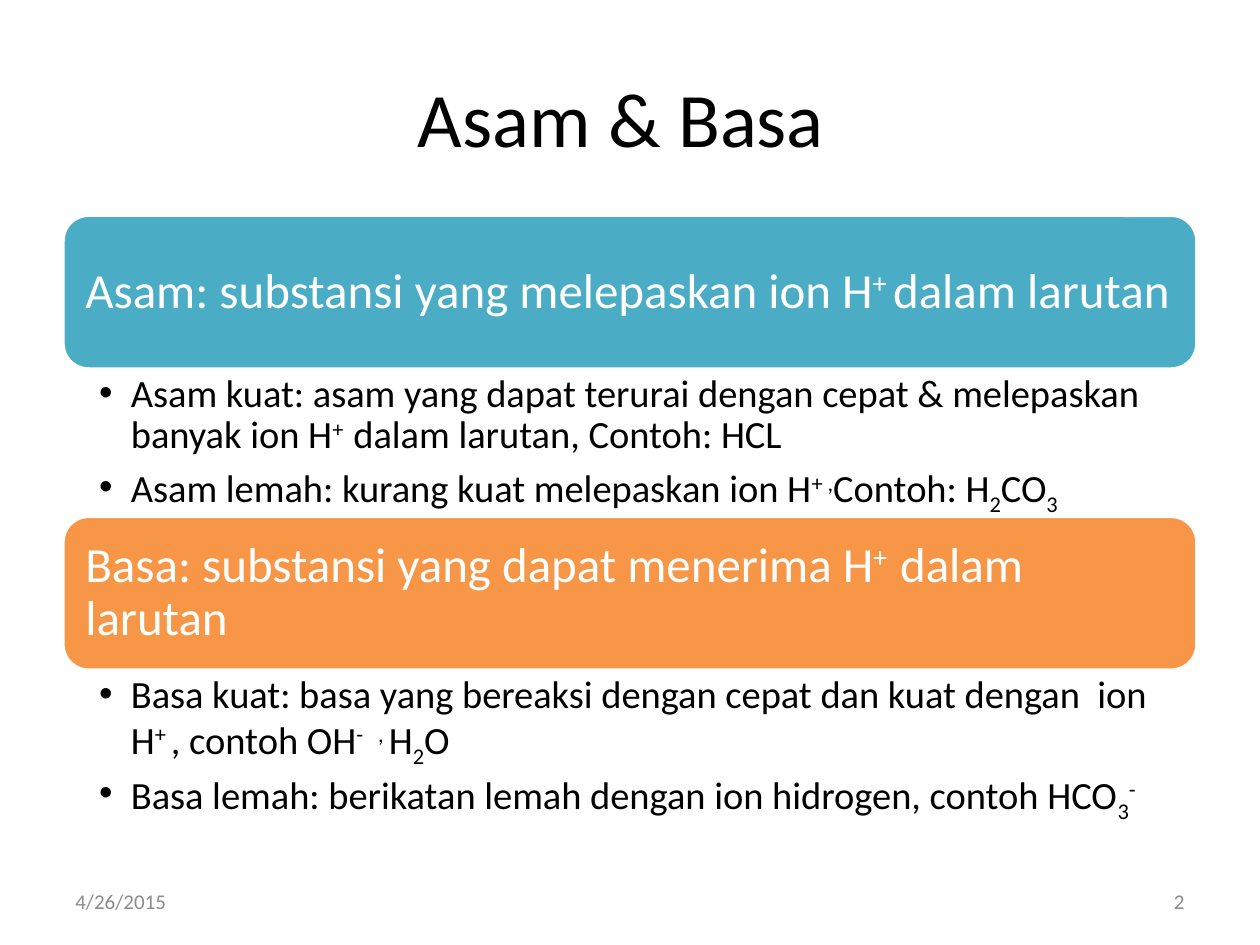
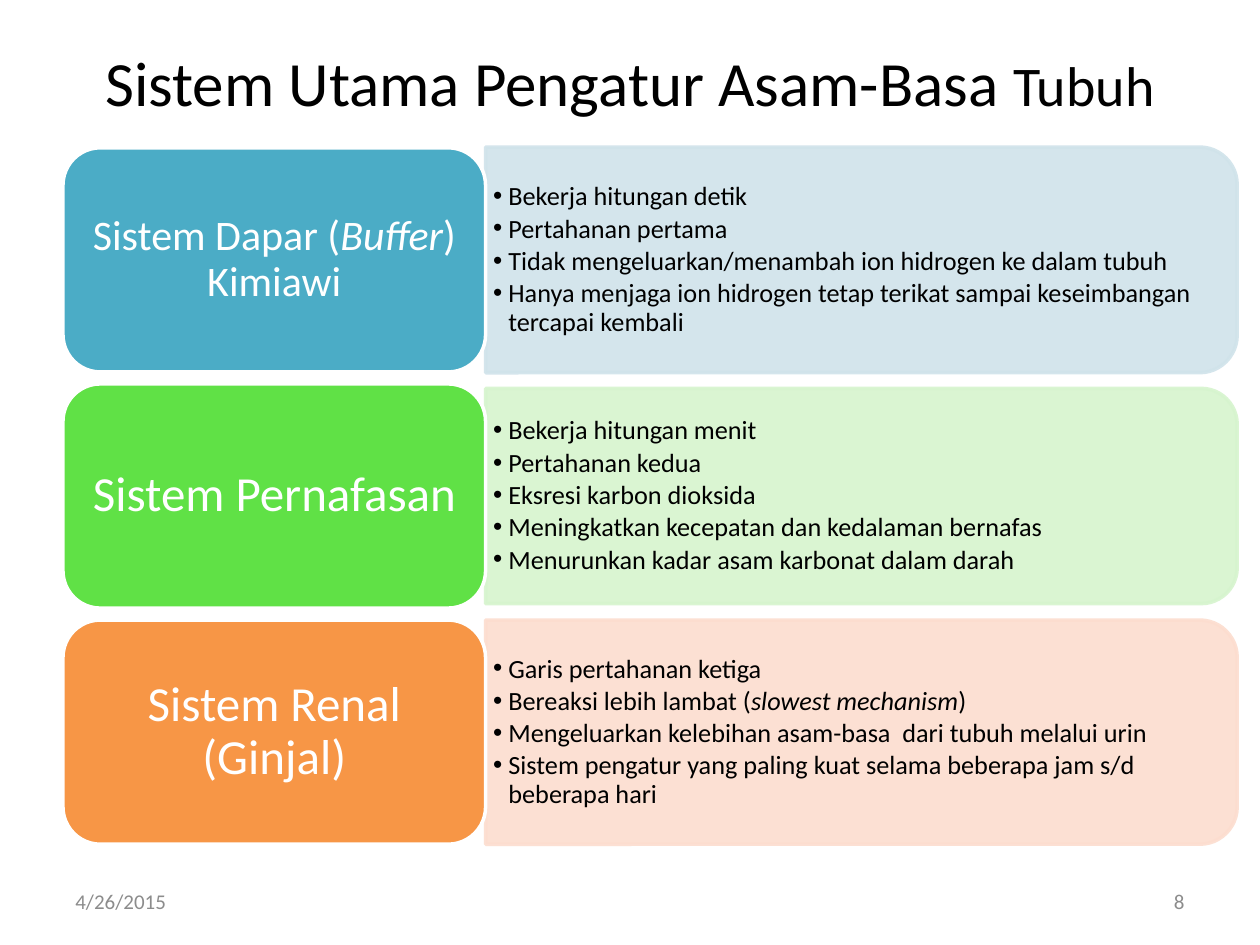
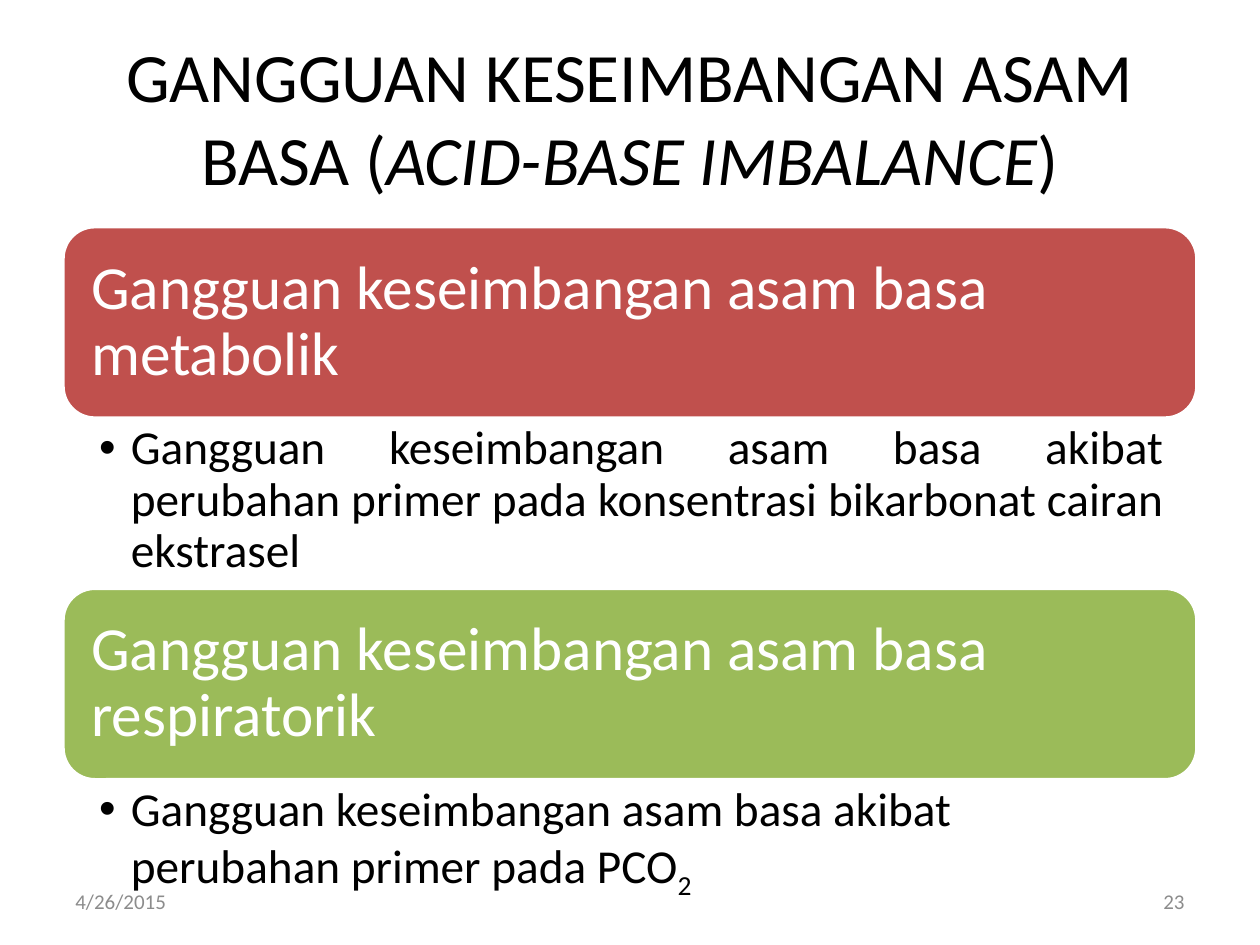
from lxml.etree import SubElement
from pptx import Presentation
from pptx.dml.color import RGBColor
from pptx.enum.shapes import MSO_SHAPE
from pptx.enum.text import MSO_ANCHOR, PP_ALIGN
from pptx.oxml.ns import qn
from pptx.util import Cm, Pt

BLACK = RGBColor(0x00, 0x00, 0x00)
WHITE = RGBColor(0xFF, 0xFF, 0xFF)
GRAY = RGBColor(0x8C, 0x8C, 0x8C)
TEAL = RGBColor(0x4B, 0xAC, 0xC6)
ORANGE = RGBColor(0xF7, 0x96, 0x46)
LIME = RGBColor(0x60, 0xE1, 0x46)
RED = RGBColor(0xC0, 0x50, 0x4D)
GREEN = RGBColor(0x9B, 0xBB, 0x59)
PALE_TEAL = RGBColor(0xD0, 0xE3, 0xEA)
PALE_LIME = RGBColor(0xD6, 0xF4, 0xCE)
PALE_ORANGE = RGBColor(0xFC, 0xDD, 0xCF)

FONT = "Calibri"
DATE = "4/26/2015"
MARGIN = 1.27
CONTENT_WIDTH = 22.86
LABEL_WIDTH = 8.52
LABEL_HEIGHT = 4.52
ROW_PITCH = 4.76


def sup(text):
    return text, {"baseline": 30000}


def sub(text):
    return text, {"baseline": -25000}


def italic(text):
    return text, {"italic": True}


def sized(text, size):
    return text, {"size": size}


def add_bullet(para, indent):
    properties = para._p.get_or_add_pPr()
    properties.set("marL", str(Cm(indent)))
    properties.set("indent", str(-Cm(indent)))
    SubElement(properties, qn("a:buFont")).set("typeface", "Arial")
    SubElement(properties, qn("a:buChar")).set("char", "•")


def write_text(frame, paragraphs, *, size, color=BLACK, align=PP_ALIGN.LEFT,
               anchor=MSO_ANCHOR.MIDDLE, insets=(0.25, 0.13, 0.25, 0.13),
               line_spacing=None, space_after=0, bullet_indent=None):
    """Fill a frame; each paragraph is a list of strings or (text, format) pairs."""
    frame.word_wrap = True
    frame.vertical_anchor = anchor
    (frame.margin_left, frame.margin_top,
     frame.margin_right, frame.margin_bottom) = map(Cm, insets)
    for index, spans in enumerate(paragraphs):
        para = frame.add_paragraph() if index else frame.paragraphs[0]
        para.alignment = align
        para.space_after = Pt(space_after)
        if line_spacing:
            para.line_spacing = line_spacing
        if bullet_indent:
            add_bullet(para, bullet_indent)
        for item in spans:
            text, style = (item, {}) if isinstance(item, str) else item
            span = para.add_run()
            span.text = text
            span.font.name = FONT
            span.font.size = Pt(style.get("size", size))
            span.font.color.rgb = color
            if style.get("italic"):
                span.font.italic = True
            if "baseline" in style:
                span.font._element.set("baseline", str(style["baseline"]))


def add_text(page, left, top, width, height, paragraphs, **style):
    box = page.shapes.add_textbox(Cm(left), Cm(top), Cm(width), Cm(height))
    write_text(box.text_frame, paragraphs, **style)


def add_filled_shape(page, kind, left, top, width, height, fill, line):
    shape = page.shapes.add_shape(kind, Cm(left), Cm(top), Cm(width), Cm(height))
    shape.shadow.inherit = False
    shape.fill.solid()
    shape.fill.fore_color.rgb = fill
    shape.line.color.rgb = line
    shape.line.width = Pt(2)
    return shape


def add_card(page, left, top, width, height, fill, heading, **style):
    card = add_filled_shape(page, MSO_SHAPE.ROUNDED_RECTANGLE,
                            left, top, width, height, fill, WHITE)
    write_text(card.text_frame, [heading], color=WHITE, line_spacing=0.9, **style)


def add_panel(page, left, top, width, height, fill):
    """Translucent panel rounded on its right side: a turned top-rounded rectangle."""
    shift = (width - height) / 2
    panel = add_filled_shape(page, MSO_SHAPE.ROUND_2_SAME_RECTANGLE,
                             left + shift, top - shift, height, width, fill, fill)
    panel.rotation = 90
    for color in panel._element.spPr.iter(qn("a:srgbClr")):
        SubElement(color, qn("a:alpha")).set("val", "90000")


def add_page(deck, title, number, title_size, title_top=0.76):
    page = deck.slides.add_slide(deck.slide_layouts[6])
    add_text(page, MARGIN, title_top, CONTENT_WIDTH, 3.18, [title],
             size=title_size, align=PP_ALIGN.CENTER)
    add_text(page, MARGIN, 17.65, 5.92, 1.02, [[DATE]], size=12, color=GRAY)
    add_text(page, 18.21, 17.65, 5.92, 1.02, [[number]], size=12, color=GRAY,
             align=PP_ALIGN.RIGHT)
    return page


def add_sections(page, top, banner_height, sections, heading_size, list_size,
                 heading_inset, list_insets):
    """Stack banners, each with its bulleted list right below."""
    for fill, heading, list_height, align, items in sections:
        add_card(page, MARGIN, top, CONTENT_WIDTH, banner_height, fill, heading,
                 size=heading_size, insets=(heading_inset,) * 4)
        top += banner_height
        add_text(page, MARGIN, top, CONTENT_WIDTH, list_height, items,
                 size=list_size, align=align, anchor=MSO_ANCHOR.TOP,
                 insets=list_insets, line_spacing=0.9,
                 space_after=0.2 * list_size, bullet_indent=0.64)
        top += list_height


def add_system_rows(page, top, rows):
    for index, (fill, pale, panel_height, size, heading, items) in enumerate(rows):
        row_top = top + index * ROW_PITCH
        panel_left = MARGIN + LABEL_WIDTH
        panel_top = row_top + (LABEL_HEIGHT - panel_height) / 2
        add_panel(page, panel_left, panel_top, 15.15, panel_height, pale)
        add_text(page, panel_left, panel_top, 14.93, panel_height, items, size=15,
                 insets=(0.15, 0.08, 0.15, 0.08), line_spacing=0.9,
                 space_after=2.25, bullet_indent=0.31)
        add_card(page, MARGIN, row_top, LABEL_WIDTH, LABEL_HEIGHT, fill, heading,
                 size=size, align=PP_ALIGN.CENTER, insets=(0.3, 0.15, 0.3, 0.15))


def build_definitions(deck):
    page = add_page(deck, ["Asam & Basa "], "2", 44)
    acid = [
        ["Asam kuat: asam yang dapat terurai dengan cepat & melepaskan banyak ion H",
         sup("+  "), "dalam larutan, Contoh: HCL"],
        ["Asam lemah: kurang kuat melepaskan ion H", sup("+ ,"), "Contoh: H",
         sub("2"), "CO", sub("3")],
    ]
    base = [
        ["Basa kuat: basa yang bereaksi dengan cepat dan kuat dengan  ion H",
         sup("+ "), ", contoh OH", sup("-   , "), "H", sub("2"), "O"],
        ["Basa lemah: berikatan lemah dengan ion hidrogen, contoh HCO",
         sub("3"), sup("-")],
    ]
    add_sections(page, 4.34, 3.1, [
        (TEAL, ["Asam: substansi yang melepaskan ion H", sup("+ "), "dalam larutan"],
         2.97, PP_ALIGN.LEFT, acid),
        (ORANGE, ["Basa: substansi yang dapat menerima H", sup("+  "), "dalam larutan"],
         2.97, PP_ALIGN.LEFT, base),
    ], heading_size=28, list_size=22, heading_inset=0.3,
        list_insets=(0.73, 0.1, 0.56, 0.1))


def build_systems(deck):
    page = add_page(deck, ["Sistem Utama Pengatur Asam-Basa ", sized("Tubuh", 32)],
                    "8", 36, title_top=0.05)
    add_system_rows(page, 2.98, [
        (TEAL, PALE_TEAL, 4.55, 24, ["Sistem Dapar (", italic("Buffer"), ") Kimiawi"], [
            ["Bekerja hitungan detik"],
            ["Pertahanan pertama"],
            ["Tidak mengeluarkan/menambah ion hidrogen ke dalam tubuh"],
            ["Hanya menjaga ion hidrogen tetap terikat sampai keseimbangan "
             "tercapai kembali"],
        ]),
        (LIME, PALE_LIME, 4.34, 28, ["Sistem Pernafasan"], [
            ["Bekerja hitungan menit"],
            ["Pertahanan kedua"],
            ["Eksresi karbon dioksida"],
            ["Meningkatkan kecepatan dan kedalaman bernafas"],
            ["Menurunkan kadar asam karbonat dalam darah"],
        ]),
        (ORANGE, PALE_ORANGE, 4.52, 28, ["Sistem Renal (Ginjal)"], [
            ["Garis pertahanan ketiga"],
            ["Bereaksi lebih lambat (", italic("slowest mechanism"), ")"],
            ["Mengeluarkan kelebihan asam-basa  dari tubuh melalui urin"],
            ["Sistem pengatur yang paling kuat selama beberapa jam s/d beberapa hari"],
        ]),
    ])


def build_imbalance(deck):
    page = add_page(deck, ["GANGGUAN KESEIMBANGAN ASAM BASA (",
                           italic("ACID-BASE IMBALANCE"), ")"], "23", 39.6)
    disorder = "Gangguan keseimbangan asam basa"
    cause = f"{disorder} akibat perubahan primer pada"
    add_sections(page, 4.57, 3.86, [
        (RED, [f"{disorder} metabolik"], 3.43, PP_ALIGN.JUSTIFY,
         [[f"{cause} konsentrasi bikarbonat cairan ekstrasel "]]),
        (GREEN, [f"{disorder} respiratorik"], 2.36, PP_ALIGN.LEFT,
         [[f"{cause} PCO", sub("2")]]),
    ], heading_size=35, list_size=27, heading_inset=0.38,
        list_insets=(0.73, 0.12, 0.68, 0.12))


def main():
    deck = Presentation()
    deck.slide_width, deck.slide_height = Cm(25.4), Cm(19.05)
    build_definitions(deck)
    build_systems(deck)
    build_imbalance(deck)
    deck.save("out.pptx")


if __name__ == "__main__":
    main()
